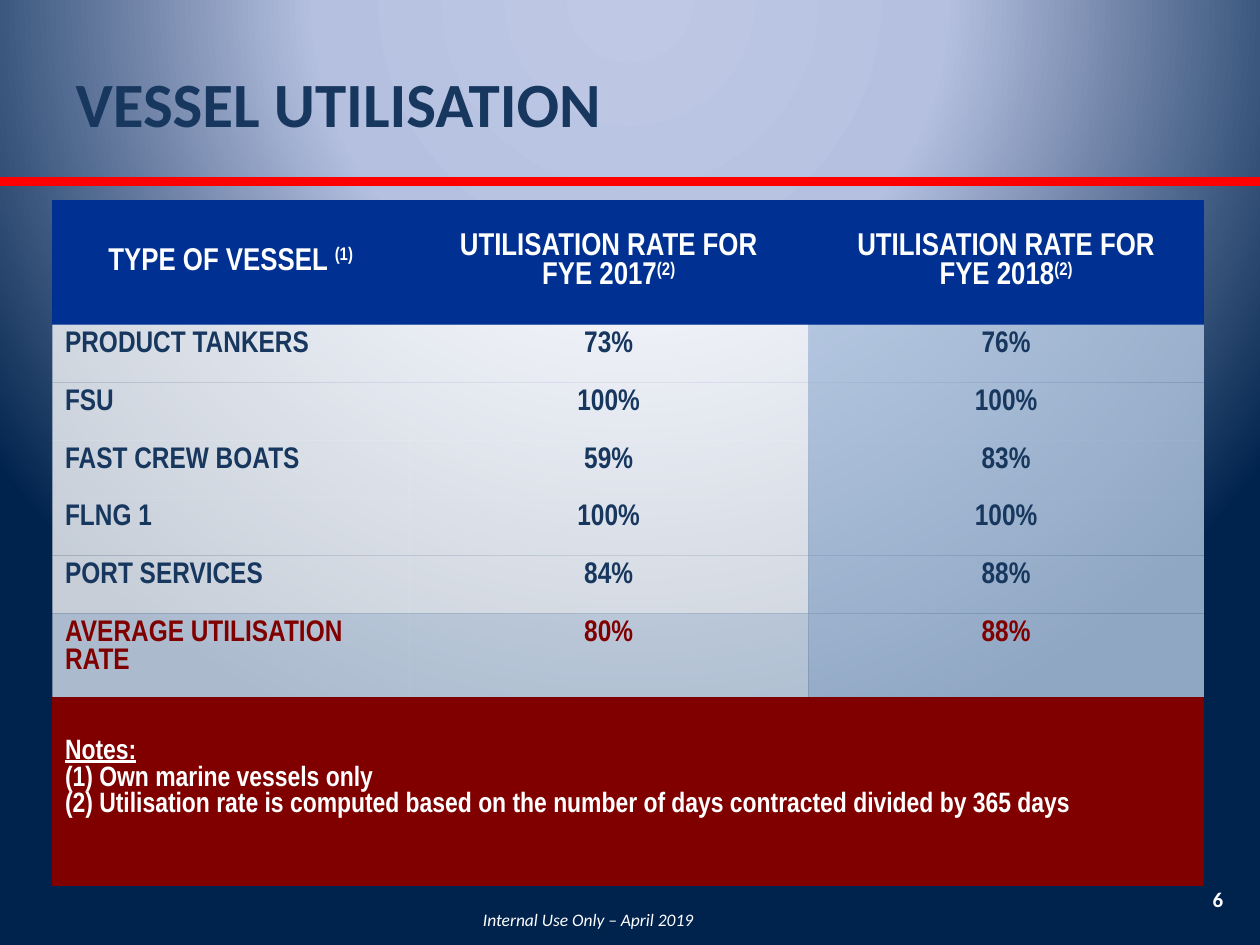
from dataclasses import dataclass
from typing import NamedTuple

from pptx import Presentation
from pptx.dml.color import RGBColor
from pptx.enum.shapes import MSO_SHAPE as Shape
from pptx.enum.text import MSO_ANCHOR as Anchor, MSO_AUTO_SIZE as AutoSize, PP_ALIGN as Align
from pptx.oxml import parse_xml
from pptx.oxml.ns import nsdecls, qn
from pptx.util import Pt


@dataclass(frozen=True)
class Theme:
    heading_font: str = "Calibri"
    table_font: str = "Arial Narrow"
    title_size: float = 36
    header_size: float = 18
    body_size: float = 17
    remark_size: float = 16
    number_size: float = 12
    footer_size: float = 10
    white: str = "FFFFFF"
    navy: str = "17375E"
    header_blue: str = "003192"
    pale_blue: str = "DCE6F2"
    column_blue: str = "B9CDE5"
    maroon: str = "800000"
    red: str = "FF0000"
    cell_opacity: int = 78
    backdrop: tuple = ((0, "BFC9E5"), (40, "B5C0E0"), (100, "00234D"))


class Box(NamedTuple):
    left: float
    top: float
    width: float
    height: float

    def lengths(self):
        return [Pt(value) for value in self]


THEME = Theme()
NO_STYLE = "{2D5ABB26-0587-4C30-8999-92F81FD0307C}"
COLUMN_SHARES = (2.83, 3.17, 3.14)
HEADER_HEIGHT, ROW_HEIGHT, AVERAGE_HEIGHT, REMARKS_HEIGHT = 71.5, 33, 39.5, 108
HEADERS = (
    (("TYPE OF VESSEL ", "(1)"),),
    (("UTILISATION RATE FOR",), ("FYE 2017", "(2)")),
    (("UTILISATION RATE FOR",), ("FYE 2018", "(2)")),
)
RATES = (
    ("PRODUCT TANKERS", "73%", "76%"),
    ("FSU", "100%", "100%"),
    ("FAST CREW BOATS", "59%", "83%"),
    ("FLNG 1", "100%", "100%"),
    ("PORT SERVICES", "84%", "88%"),
    ("AVERAGE UTILISATION RATE", "80%", "88%"),
)
REMARKS = (
    "Notes:",
    "(1) Own marine vessels only",
    "(2) Utilisation rate is computed based on the number of days contracted divided by 365 days",
)


def add_run(paragraph, text, font, size, color, bold=False, italic=False):
    run = paragraph.add_run()
    run.text = text
    run.font.name = font
    run.font.size = Pt(size)
    run.font.bold = bold
    run.font.italic = italic
    run.font.color.rgb = RGBColor.from_string(color)
    return run


def paragraph_at(frame, index):
    return frame.paragraphs[0] if index == 0 else frame.add_paragraph()


def fill_cell(cell, color, opacity=100):
    cell.fill.solid()
    cell.fill.fore_color.rgb = RGBColor.from_string(color)
    if opacity < 100:
        rgb = cell._tc.tcPr.find(f".//{qn('a:srgbClr')}")
        rgb.append(parse_xml(f'<a:alpha {nsdecls("a")} val="{opacity * 1000}"/>'))


def paint_backdrop(slide):
    """Radial gradient centred above the slide."""
    stops = "".join(
        f'<a:gs pos="{pos * 1000}"><a:srgbClr val="{color}"/></a:gs>'
        for pos, color in THEME.backdrop
    )
    gradient = parse_xml(
        f'<a:gradFill {nsdecls("a")} rotWithShape="1"><a:gsLst>{stops}</a:gsLst>'
        '<a:path path="circle"><a:fillToRect l="50000" t="-80000" r="50000" b="180000"/>'
        "</a:path></a:gradFill>"
    )
    slide.background.fill.solid()
    solid = slide._element.find(f".//{qn('p:bgPr')}/{qn('a:solidFill')}")
    solid.getparent().replace(solid, gradient)


def add_rule(slide, box):
    rule = slide.shapes.add_shape(Shape.RECTANGLE, *box.lengths())
    rule.shadow.inherit = False
    rule.fill.solid()
    rule.fill.fore_color.rgb = rule.line.color.rgb = RGBColor.from_string(THEME.red)
    rule.line.width = Pt(2)


def set_title(slide, box, text):
    title = slide.shapes.title
    title.left, title.top, title.width, title.height = box.lengths()
    frame = title.text_frame
    frame.word_wrap = True
    frame.auto_size = AutoSize.SHAPE_TO_FIT_TEXT
    frame.vertical_anchor = Anchor.MIDDLE
    heading = frame.paragraphs[0]
    heading.alignment = Align.LEFT
    run = add_run(heading, text, THEME.heading_font, THEME.title_size, THEME.navy, bold=True)
    run.font._element.find(qn("a:solidFill")).addnext(parse_xml(
        f'<a:effectLst {nsdecls("a")}><a:outerShdw blurRad="38100" dist="38100" dir="2700000">'
        '<a:srgbClr val="000000"><a:alpha val="43000"/></a:srgbClr></a:outerShdw></a:effectLst>'
    ))


def add_caption(slide, box, text, size, bold=False, italic=False):
    frame = slide.shapes.add_textbox(*box.lengths()).text_frame
    frame.word_wrap = True
    frame.vertical_anchor = Anchor.MIDDLE
    caption = frame.paragraphs[0]
    caption.alignment = Align.CENTER
    add_run(caption, text, THEME.heading_font, size, THEME.white, bold, italic)


def write_header(cell, lines):
    fill_cell(cell, THEME.header_blue)
    cell.vertical_anchor = Anchor.MIDDLE
    for index, parts in enumerate(lines):
        line = paragraph_at(cell.text_frame, index)
        line.alignment = Align.CENTER
        for part in parts:
            run = add_run(line, part, THEME.table_font, THEME.header_size, THEME.white, bold=True)
            if part.startswith("("):
                run.font._element.set("baseline", "30000")


def write_rate(cell, text, column, is_average):
    base = THEME.pale_blue if is_average else THEME.white
    fill_cell(cell, THEME.column_blue if column == 2 else base, THEME.cell_opacity)
    entry = cell.text_frame.paragraphs[0]
    entry.alignment = Align.CENTER if column else Align.LEFT
    color = THEME.maroon if is_average else THEME.navy
    add_run(entry, text, THEME.table_font, THEME.body_size, color, bold=True)


def write_remarks(cell):
    fill_cell(cell, THEME.maroon)
    cell.margin_top = Pt(24)
    for index, text in enumerate(REMARKS):
        remark = paragraph_at(cell.text_frame, index)
        run = add_run(remark, text, THEME.table_font, THEME.remark_size, THEME.white, bold=True)
        run.font.underline = index == 0


def add_utilisation_table(slide, box):
    heights = [HEADER_HEIGHT, *[ROW_HEIGHT] * (len(RATES) - 1), AVERAGE_HEIGHT, REMARKS_HEIGHT]
    table = slide.shapes.add_table(len(heights), len(HEADERS), *box.lengths()).table
    table.first_row = table.horz_banding = False
    table._tbl.tblPr.find(qn("a:tableStyleId")).text = NO_STYLE
    for column, share in zip(table.columns, COLUMN_SHARES):
        column.width = Pt(round(box.width * share / sum(COLUMN_SHARES), 2))
    for row, height in zip(table.rows, heights):
        row.height = Pt(height)

    for column, lines in enumerate(HEADERS):
        write_header(table.cell(0, column), lines)
    for row, rates in enumerate(RATES, start=1):
        for column, text in enumerate(rates):
            write_rate(table.cell(row, column), text, column, row == len(RATES))
    last = len(heights) - 1
    table.cell(last, 0).merge(table.cell(last, len(HEADERS) - 1))
    write_remarks(table.cell(last, 0))


def main():
    deck = Presentation()
    deck.slide_width, deck.slide_height = Pt(720), Pt(540)
    slide = deck.slides.add_slide(deck.slide_layouts[5])
    paint_backdrop(slide)
    add_rule(slide, Box(0, 102, 720, 3.6))
    set_title(slide, Box(36, 33, 630, 51), "VESSEL UTILISATION")
    add_utilisation_table(slide, Box(30, 114, 658, 384))
    add_caption(slide, Box(666, 499, 60, 29), "6", THEME.number_size, bold=True)
    add_caption(slide, Box(222, 517, 228, 17), "Internal Use Only – April 2019",
                THEME.footer_size, italic=True)
    deck.save("out.pptx")


if __name__ == "__main__":
    main()
